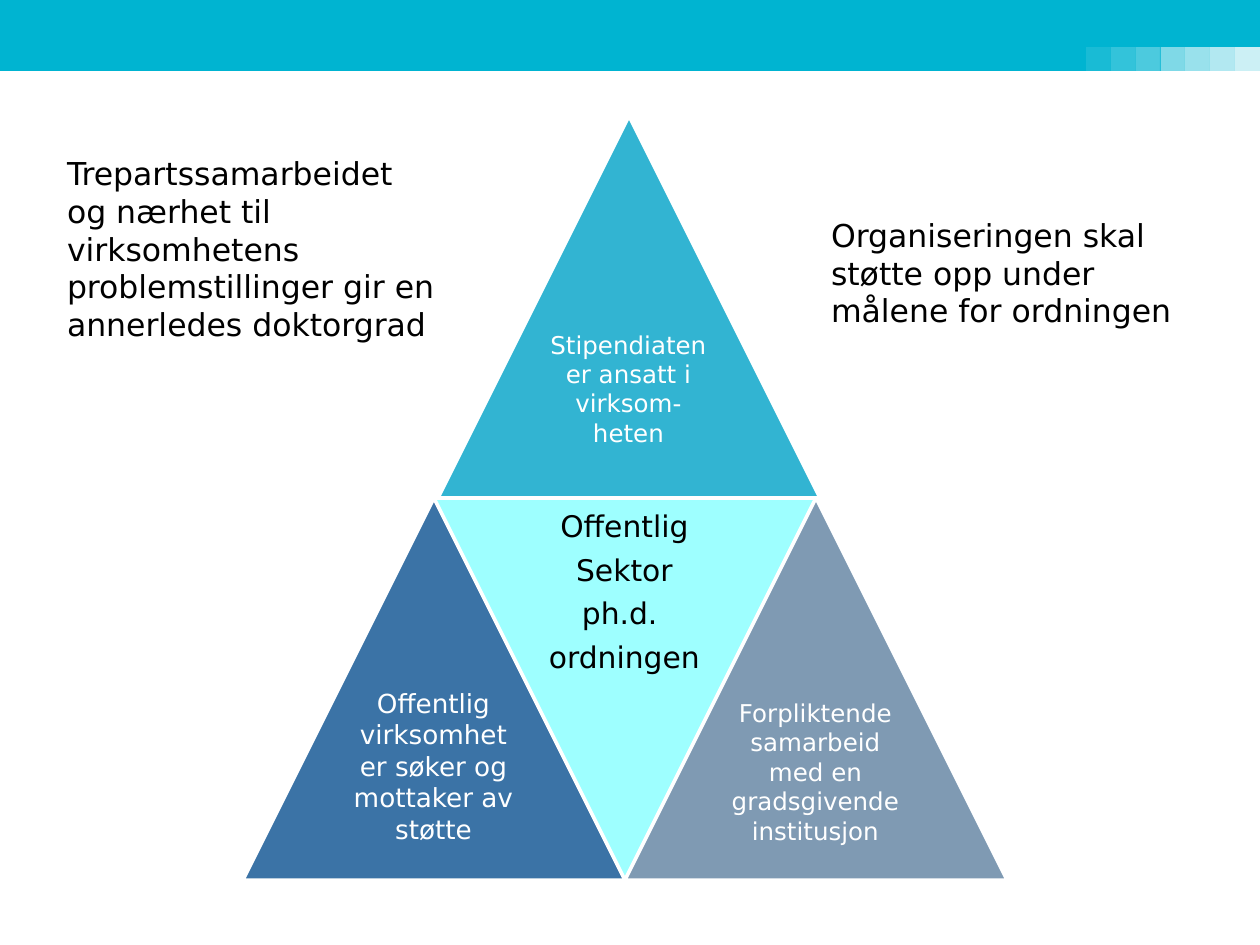
from dataclasses import dataclass

from lxml.etree import SubElement
from pptx import Presentation
from pptx.dml.color import RGBColor as Rgb
from pptx.enum.shapes import MSO_SHAPE as Shape
from pptx.enum.text import MSO_ANCHOR as Anchor, PP_ALIGN as Align
from pptx.oxml.ns import qn
from pptx.util import Pt

SCALE = 914400 / 126


@dataclass(frozen=True)
class Theme:
    font: str = "DejaVu Sans"
    band: str = "00B4D1"
    top: str = "1CACCE"
    left: str = "004A8C"
    core: str = "66FFFF"
    right: str = "003769"
    white: str = "FFFFFF"
    black: str = "000000"
    small: int = 14
    medium: int = 15
    large: int = 17
    note: int = 18
    rule: int = 2


THEME = Theme()


def px(n):
    return round(n * SCALE)


def paint(shape, color, alpha=100, edge=False):
    """Fill a shape, with opacity in percent and an optional white edge."""
    shape.shadow.inherit = False
    shape.fill.solid()
    shape.fill.fore_color.rgb = Rgb.from_string(color)
    if alpha < 100:
        tone = shape.element.spPr.find(qn("a:solidFill"))[0]
        SubElement(tone, qn("a:alpha")).set("val", str(alpha * 1000))
    if edge:
        shape.line.color.rgb = Rgb.from_string(THEME.white)
        shape.line.width = Pt(THEME.rule)
    else:
        shape.line.fill.background()


def draw(slide, kind, box, color, alpha=100, edge=False):
    shape = slide.shapes.add_shape(kind, *map(px, box))
    paint(shape, color, alpha, edge)
    return shape


def write(shape, text, size, color, align, pads, gap=None):
    """Set middle text; pads are left, top, right, bottom."""
    frame = shape.text_frame
    frame.word_wrap = True
    frame.vertical_anchor = Anchor.MIDDLE
    (frame.margin_left, frame.margin_top,
     frame.margin_right, frame.margin_bottom) = map(px, pads)
    frame.text = text
    for para in frame.paragraphs:
        para.alignment = align
        if gap:
            para.line_spacing = 0.9
            para.space_after = Pt(gap)
        for run in para.runs:
            run.font.name = THEME.font
            run.font.size = Pt(size)
            run.font.color.rgb = Rgb.from_string(color)


def header(slide, box):
    """Band with a notch at its lower right, filled by fading squares."""
    x, y, w, h = box
    notch, side, step = 174, 25, 24.8
    edge, rise = x + w - notch, y + h - 24
    form = slide.shapes.build_freeform(x, y + h, scale=SCALE)
    form.add_line_segments([(edge, y + h), (edge, rise), (x + w, rise),
                            (x + w, y), (x, y)], close=True)
    paint(form.convert_to_shape(), THEME.band)
    for i, alpha in enumerate((90, 80, 70, 50, 40, 30, 20)):
        spot = (edge + round(i * step), rise - 1, side, side)
        draw(slide, Shape.RECTANGLE, spot, THEME.band, alpha)


def pyramid(slide, box):
    """Four triangles, the middle one upside down, each with a label."""
    x, y, w, h = box
    side, half, quarter = w // 2, w // 4, w // 8
    pad = 8
    parts = [
        (half + 4, 0, THEME.top, 90, THEME.small, THEME.white, 28,
         "Stipendiaten er ansatt i virksom-heten"),
        (0, side, THEME.left, 77, THEME.medium, THEME.white, 37,
         "Offentlig virksomhet er søker og mottaker av støtte"),
        (half, side, THEME.core, 63, THEME.large, THEME.black, 0,
         "Offentlig\nSektor\nph.d. \nordningen"),
        (side, side, THEME.right, 50, THEME.small, THEME.white, 26,
         "Forpliktende samarbeid med en gradsgivende institusjon"),
    ]
    for dx, dy, fill, alpha, size, ink, lift, text in parts:
        flip = fill == THEME.core
        shape = draw(slide, Shape.ISOSCELES_TRIANGLE,
                     (x + dx, y + dy, side, side), fill, alpha, True)
        shape.rotation = 180 if flip else 0
        drop = 0 if flip else half
        spot = (x + dx + quarter, y + dy + drop, half, half)
        label = slide.shapes.add_textbox(*map(px, spot))
        write(label, text, size, ink, Align.CENTER,
              (pad, pad, pad, pad + lift), 6.5 if flip else None)


def note(slide, box, text, lift=0):
    shape = draw(slide, Shape.RECTANGLE, box, THEME.white, edge=True)
    write(shape, text, THEME.note, THEME.black, Align.LEFT,
          (13, 6, 13, 6 + lift))


def main():
    deck = Presentation()
    deck.slide_width, deck.slide_height = px(1260), px(945)
    slide = deck.slides.add_slide(deck.slide_layouts[6])
    header(slide, (0, 0, 1260, 71))
    pyramid(slide, (243, 116, 764, 764))
    note(slide, (54, 173, 397, 189),
         "Trepartssamarbeidet og nærhet til virksomhetens "
         "problemstillinger gir en annerledes doktorgrad", 38)
    note(slide, (818, 178, 387, 189),
         "Organiseringen skal støtte opp under målene for ordningen")
    deck.save("out.pptx")


if __name__ == "__main__":
    main()
